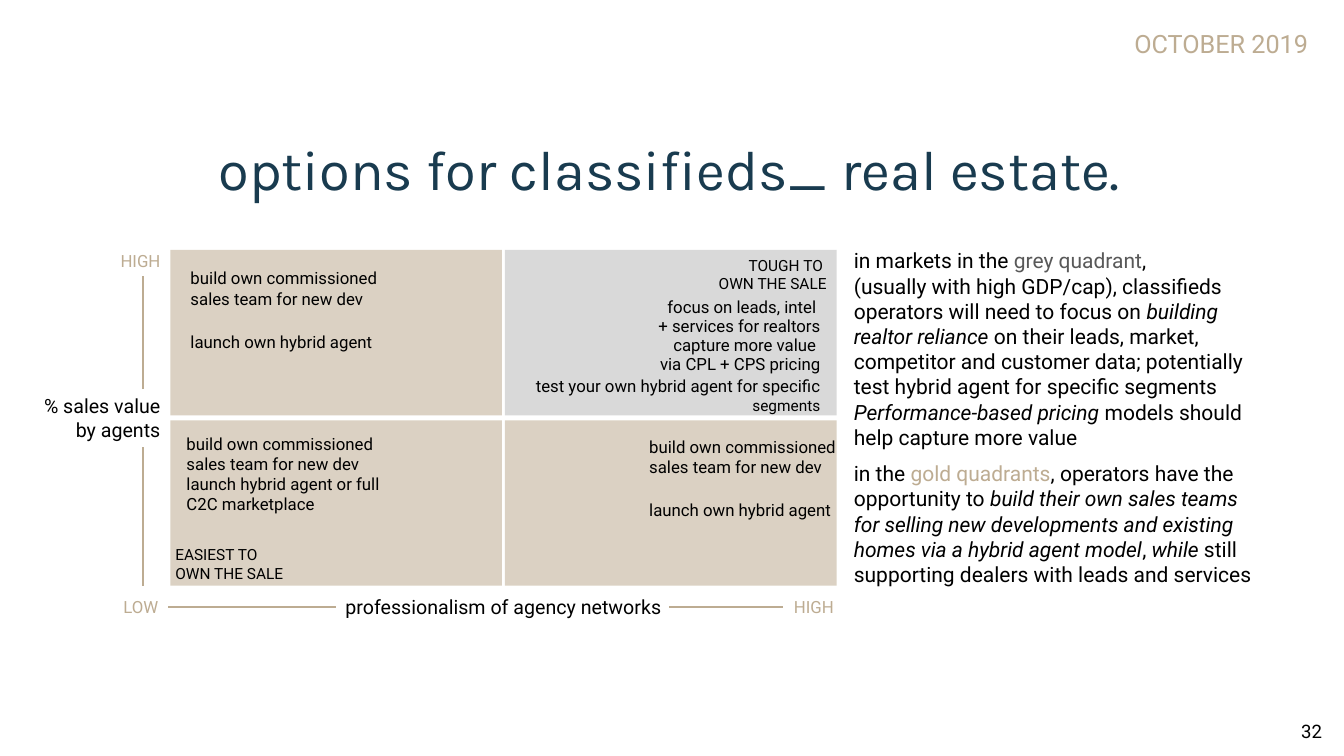
"""Build the real estate classifieds options slide."""
from lxml import etree
from pptx import Presentation
from pptx.dml.color import RGBColor
from pptx.enum.shapes import MSO_CONNECTOR, MSO_SHAPE
from pptx.enum.text import MSO_ANCHOR, MSO_AUTO_SIZE, PP_ALIGN
from pptx.oxml.ns import qn
from pptx.util import Inches, Pt

RECT = MSO_SHAPE.RECTANGLE
STRAIGHT = MSO_CONNECTOR.STRAIGHT
LEFT, CENTER, RIGHT = PP_ALIGN.LEFT, PP_ALIGN.CENTER, PP_ALIGN.RIGHT
TOP, MIDDLE = MSO_ANCHOR.TOP, MSO_ANCHOR.MIDDLE
NO_FIT = MSO_AUTO_SIZE.NONE
RIGHT_SIDE, LEFT_SIDE = 3, 1
COLORS = {"navy": "193B4F", "gold": "BDAC92", "sand": "DBD1C3",
          "grey": "D9D9D9", "dark": "595959", "black": "000000"}


def rgb(name):
    """Return the named colour."""
    return RGBColor.from_string(COLORS[name])


def write_text(tf, paragraphs, size=12, color="black", font="Roboto", align=LEFT,
               anchor=TOP, inset=(0.1, 0.05), wrap=True, line=1.0, gaps=None):
    """Fill a text frame; gaps maps a paragraph index to its space before in points."""
    tf.word_wrap, tf.auto_size, tf.vertical_anchor = wrap, NO_FIT, anchor
    tf.margin_left = tf.margin_right = Inches(inset[0])
    tf.margin_top = tf.margin_bottom = Inches(inset[1])
    for i, runs in enumerate(paragraphs):
        p = tf.paragraphs[0] if i == 0 else tf.add_paragraph()
        pPr = p._p.get_or_add_pPr()
        pPr.set("marL", "0")
        pPr.set("indent", "0")
        etree.SubElement(pPr, qn("a:buNone"))
        p.alignment, p.line_spacing = align, line
        p.space_before, p.space_after = Pt((gaps or {}).get(i, 0)), Pt(0)
        for text, fmt in [(runs, {})] if isinstance(runs, str) else runs:
            r = p.add_run()
            r.text = text
            r.font.name = font
            r.font.size = Pt(fmt.get("size", size))
            r.font.color.rgb = rgb(fmt.get("color", color))
            r.font.italic = fmt.get("italic", False)


class SlideBuilder:
    """Place elements on a slide by percent of its width and height."""

    def __init__(self, prs):
        """Add a slide with title and body placeholders."""
        self.col, self.row = prs.slide_width / 100, prs.slide_height / 100
        self.s = prs.slides.add_slide(prs.slide_layouts[1])

    def box(self, x, y, w, h):
        """Convert percent shares into lengths."""
        return (round(x * self.col), round(y * self.row),
                round(w * self.col), round(h * self.row))

    def placeholder(self, idx, at, paragraphs, **fmt):
        """Move and fill a placeholder."""
        sp = self.s.placeholders[idx]
        sp.left, sp.top, sp.width, sp.height = self.box(*at)
        write_text(sp.text_frame, paragraphs, **fmt)

    def text(self, at, *paragraphs, **fmt):
        """Add a text box."""
        sp = self.s.shapes.add_textbox(*self.box(*at))
        write_text(sp.text_frame, paragraphs, **fmt)
        return sp

    def rect(self, at, color):
        """Add a plain filled rectangle."""
        sp = self.s.shapes.add_shape(RECT, *self.box(*at))
        sp.shadow.inherit = False
        sp.fill.solid()
        sp.fill.fore_color.rgb = rgb(color)
        sp.line.fill.background()

    def line(self, x1, y1, x2, y2):
        """Add a gold axis line."""
        ends = self.box(x1, y1, x2, y2)
        cxn = self.s.shapes.add_connector(STRAIGHT, *ends)
        cxn.line.color.rgb = rgb("gold")
        cxn.line.width = Pt(1.5)
        etree.SubElement(cxn._element.spPr, qn("a:effectLst"))
        return cxn


def add_axes(b):
    """Draw the axis captions and lines."""
    b.text((24.75, 78, 25.43, 4.53), "professionalism of agency networks",
           size=14, align=CENTER, wrap=False)
    b.text((1.95, 51.47, 10.73, 7.6), "% sales value", "by agents",
           size=14, align=RIGHT, wrap=False)
    end = {"color": "gold", "align": RIGHT, "wrap": False}
    b.text((8.18, 32.53, 4.5, 4), "HIGH", **end)
    low = b.text((8.33, 78.27, 4.2, 4), "LOW", **end)
    high = b.text((58.28, 78.27, 4.5, 4), "HIGH", **end)
    b.line(49.8, 80.27, 58.28, 80.27).end_connect(high, LEFT_SIDE)
    b.line(12.53, 80.27, 24.98, 80.27).begin_connect(low, RIGHT_SIDE)
    b.line(10.65, 51.47, 10.65, 36.53)
    b.line(10.65, 77.47, 10.65, 59.07)


def add_quadrants(b):
    """Draw the two by two matrix with its options."""
    for i, color in enumerate(("sand", "grey", "sand", "sand")):
        row, col = divmod(i, 2)
        b.rect((12.67 + col * 24.9, 33.07 + row * 22.53, 24.68, 21.87), color)
    inset = (0.13, 0.07)
    team, hybrid = "build own commissioned sales team for new dev", "launch own hybrid agent"
    for x, y, second, gap in ((13.2, 34.53, hybrid, 16.4),
                              (12.9, 56.4, "launch hybrid agent or full C2C marketplace", 0),
                              (47.33, 56.8, hybrid, 16.4)):
        b.text((x, y, 18.38, 13), team, second, inset=inset, gaps={1: gap})
    tough = {"align": RIGHT, "inset": inset}
    b.text((37.28, 38.53, 24.75, 10.4), "focus on leads, intel ", "+ services for realtors",
           "capture more value ", "via CPL + CPS pricing", line=Pt(13.4), **tough)
    b.text((37.28, 48.8, 24.75, 7),
           [("test your own hybrid agent for specific ", {}), ("segments", {"size": 11})],
           **tough)
    b.text((12.3, 71.47, 9.68, 6.27), "EASIEST TO", "OWN THE SALE", size=11, wrap=False)
    b.text((52.58, 33.2, 9.68, 6.27), "TOUGH TO ", "OWN THE SALE",
           size=11, align=RIGHT, wrap=False)


def main():
    """Build and save the slide."""
    prs = Presentation()
    prs.slide_width, prs.slide_height = Inches(13.33), Inches(7.5)
    b = SlideBuilder(prs)
    b.placeholder(0, (4.5, 16, 90.6, 11.2), ["options for classifieds_ real estate."],
                  size=40, color="navy", font="Karla", align=CENTER, inset=(0.13, 0.13))
    add_quadrants(b)
    add_axes(b)
    it = {"italic": True}
    b.placeholder(1, (62.78, 32.13, 31.8, 46.53), [
        [("in markets in the ", {}), ("grey quadrant", {"color": "dark"}), (",", {})],
        [("(usually with high GDP/cap), classifieds operators will need to focus on ", {}),
         ("building realtor reliance", it),
         (" on their leads, market, competitor and customer data; potentially test "
          "hybrid agent for specific segments", {})],
        [("Performance-based pricing", it),
         (" models should help capture more value", {})],
        [("in the ", {}), ("gold quadrants", {"color": "gold"}),
         (", operators have the opportunity to ", {}),
         ("build their own sales teams for selling new developments and existing homes "
          "via a hybrid agent model", it),
         (", ", {}), ("while ", it),
         ("still supporting dealers with leads and services", {})],
    ], size=15, line=Pt(18), gaps={3: 8})
    b.text((96.08, 93.6, 3.9, 6.27), "32", size=13.3, anchor=MIDDLE, inset=(0.1, 0.1))
    b.text((81.75, 2.53, 18.23, 6.4), "OCTOBER 2019",
           size=18, color="gold", align=CENTER, anchor=MIDDLE)
    prs.save("out.pptx")


if __name__ == "__main__":
    main()
